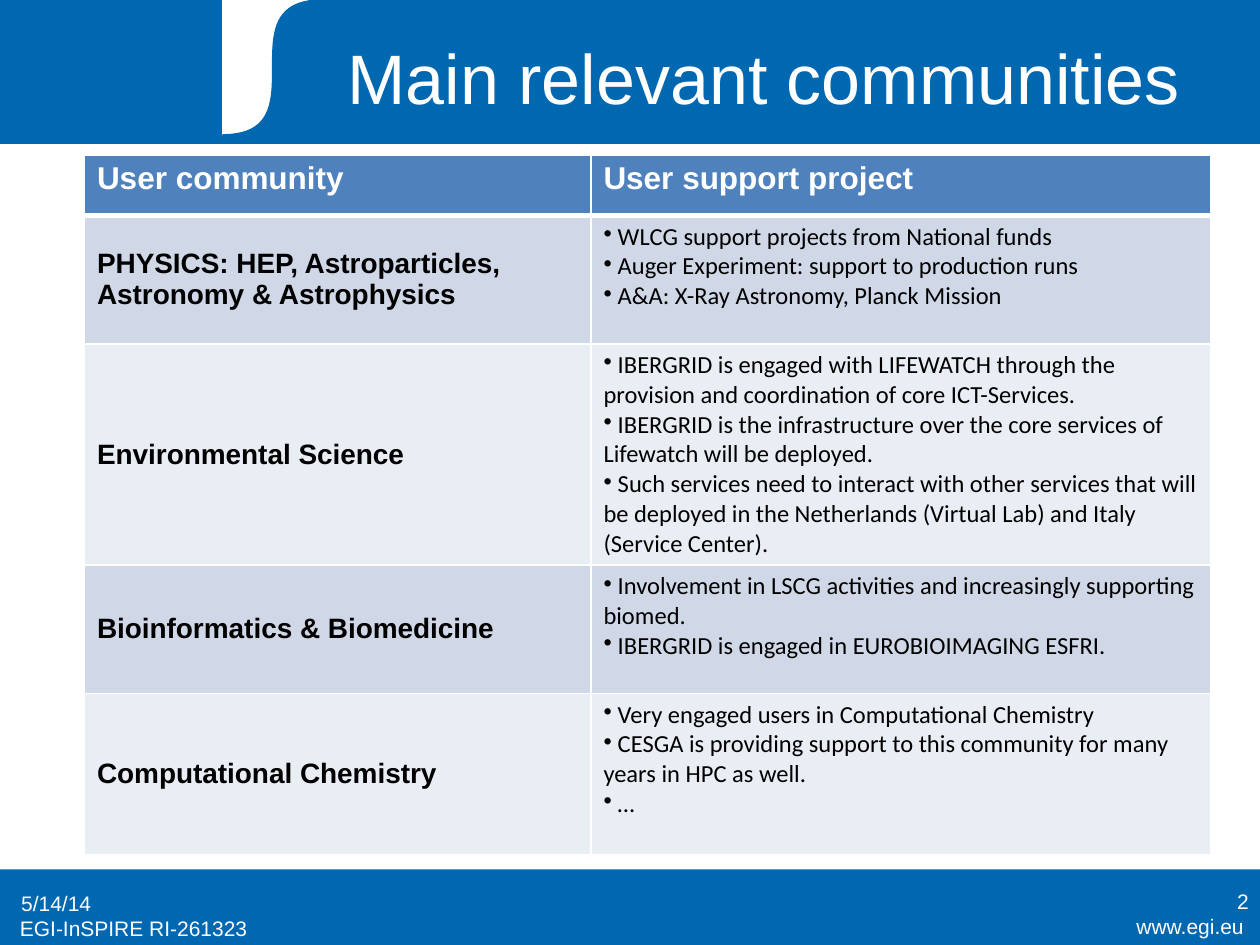
from dataclasses import dataclass

from lxml.etree import SubElement
from pptx import Presentation
from pptx.dml.color import RGBColor
from pptx.enum.shapes import MSO_SHAPE
from pptx.enum.text import MSO_ANCHOR, PP_ALIGN
from pptx.oxml.ns import qn
from pptx.util import Emu, Inches, Pt


@dataclass(frozen=True)
class Theme:
    blue: str = "0067B1"
    white: str = "FFFFFF"
    black: str = "000000"
    header: str = "4F81BD"
    bands: tuple[str, str] = ("D0D8E8", "E9EDF4")
    heading_font: str = "Arial"
    body_font: str = "Calibri"
    title_size: int = 40
    header_size: int = 18
    community_size: int = 16
    project_size: int = 14
    footer_size: int = 12


@dataclass(frozen=True)
class Box:
    """Left, top, width and height in percent of the slide."""
    left: float
    top: float
    width: float
    height: float

    def lengths(self) -> tuple[Emu, Emu, Emu, Emu]:
        return across(self.left), down(self.top), across(self.width), down(self.height)


@dataclass(frozen=True)
class Label:
    text: str
    box: Box
    size: int
    align: PP_ALIGN = PP_ALIGN.LEFT
    anchor: MSO_ANCHOR = MSO_ANCHOR.MIDDLE


@dataclass(frozen=True)
class Community:
    name: list[str]
    projects: list[str]
    height: float


THEME = Theme()
SLIDE_WIDTH, SLIDE_HEIGHT = Inches(10), Inches(7.5)
FOOTER = Box(0, 92, 100, 8)
BANNER = Box(0, 0, 100, 15.2)
NOTCH = Box(17.7, 0, 19.7, 14.27)
CURVE_SHARE = 0.4
CURVE_STEPS = 40
TABLE = Box(6.7, 16.4, 89.4, 74.07)
COLUMN_WIDTHS = (40.2, 49.2)
HEADER_HEIGHT = 6.4
HEADERS = ("User community", "User support project")

LABELS = [
    Label("www.egi.eu", Box(83.9, 96, 15.8, 4.13), THEME.footer_size,
          PP_ALIGN.RIGHT, MSO_ANCHOR.TOP),
    Label("EGI-InSPIRE RI-261323", Box(0.6, 96.27, 25, 4.13), THEME.footer_size,
          anchor=MSO_ANCHOR.TOP),
    Label("Main relevant communities", Box(23.2, 1.73, 74.8, 12.67), THEME.title_size,
          PP_ALIGN.CENTER),
    Label("5/14/14", Box(0.7, 92.93, 23.3, 5.33), THEME.footer_size),
    Label("2", Box(76.8, 92.67, 23.3, 5.33), THEME.footer_size, PP_ALIGN.RIGHT),
]

COMMUNITIES = [
    Community(
        ["PHYSICS: HEP, Astroparticles,", "Astronomy & Astrophysics"],
        ["WLCG support projects from National funds",
         "Auger Experiment: support to production runs",
         "A&A: X-Ray Astronomy, Planck Mission"], 13.6),
    Community(
        ["Environmental Science"],
        ["IBERGRID is engaged with LIFEWATCH through the provision and coordination "
         "of core ICT-Services.",
         "IBERGRID is the infrastructure over the core services of Lifewatch will be deployed.",
         "Such services need to interact with other services that will be deployed in "
         "the Netherlands (Virtual Lab) and Italy (Service Center)."], 23.4),
    Community(
        ["Bioinformatics & Biomedicine"],
        ["Involvement in LSCG activities and increasingly supporting biomed.",
         "IBERGRID is engaged in EUROBIOIMAGING ESFRI."], 13.6),
    Community(
        ["Computational Chemistry"],
        ["Very engaged users in Computational Chemistry",
         "CESGA is providing support to this community for many years in HPC as well.",
         "…"], 17.07),
]


def across(percent: float) -> Emu:
    return Emu(round(SLIDE_WIDTH * percent / 100))


def down(percent: float) -> Emu:
    return Emu(round(SLIDE_HEIGHT * percent / 100))


def write_text(frame, lines: list[str], *, size: int, color: str,
               font: str = THEME.heading_font, bold: bool = False,
               align: PP_ALIGN = PP_ALIGN.LEFT, bullet: str = "") -> None:
    frame.word_wrap = True
    for index, line in enumerate(lines):
        paragraph = frame.add_paragraph() if index else frame.paragraphs[0]
        paragraph.alignment = align
        if bullet:
            properties = paragraph._p.get_or_add_pPr()
            properties.set("marL", "0")
            properties.set("indent", "0")
            SubElement(properties, qn("a:buChar"), char=bullet)
        run = paragraph.add_run()
        run.text = f" {line}" if bullet else line
        run.font.size = Pt(size)
        run.font.name = font
        run.font.bold = bold
        run.font.color.rgb = RGBColor.from_string(color)


def paint(shape, color: str, outlined: bool = True) -> None:
    shape.shadow.inherit = False
    shape.fill.solid()
    shape.fill.fore_color.rgb = RGBColor.from_string(color)
    if outlined:
        shape.line.color.rgb = RGBColor.from_string(color)
        shape.line.width = Pt(0.75)
    else:
        shape.line.fill.background()


def draw_band(slide, box: Box, color: str, outlined: bool = True) -> None:
    shape = slide.shapes.add_shape(MSO_SHAPE.RECTANGLE, *box.lengths())
    paint(shape, color, outlined)


def draw_swoosh(slide, box: Box) -> None:
    left, top, width, height = box.lengths()
    right, bottom = left + width, top + height
    points = [(right, bottom), (left, bottom)]
    for step in range(1, CURVE_STEPS + 1):
        t = step / CURVE_STEPS
        x_share = CURVE_SHARE * (3 * t * (1 - t) ** 2 + t ** 3)
        y_share = (1 - t) ** 3 + 3 * t * (1 - t) ** 2
        points.append((left + round(width * x_share), top + round(height * y_share)))
    builder = slide.shapes.build_freeform(right, top)
    builder.add_line_segments(points, close=True)
    paint(builder.convert_to_shape(), THEME.blue)


def draw_label(slide, label: Label) -> None:
    frame = slide.shapes.add_textbox(*label.box.lengths()).text_frame
    frame.vertical_anchor = label.anchor
    write_text(frame, [label.text], size=label.size, color=THEME.white, align=label.align)


def style_cell(cell, fill: str, top: float, bottom: float) -> None:
    properties = cell._tc.get_or_add_tcPr()
    for side, width in (("L", 1), ("R", 1), ("T", top), ("B", bottom)):
        line = SubElement(properties, qn(f"a:ln{side}"), w=str(Pt(width)))
        solid = SubElement(line, qn("a:solidFill"))
        SubElement(solid, qn("a:srgbClr"), val=THEME.white)
    cell.fill.solid()
    cell.fill.fore_color.rgb = RGBColor.from_string(fill)


def draw_table(slide) -> None:
    table = slide.shapes.add_table(
        len(COMMUNITIES) + 1, len(HEADERS), *TABLE.lengths()).table
    table.first_row = table.horz_banding = False
    for column, width in zip(table.columns, COLUMN_WIDTHS):
        column.width = across(width)
    heights = [HEADER_HEIGHT] + [community.height for community in COMMUNITIES]
    for row, height in zip(table.rows, heights):
        row.height = down(height)
    for column, header in enumerate(HEADERS):
        cell = table.cell(0, column)
        style_cell(cell, THEME.header, 1, 3)
        write_text(cell.text_frame, [header], size=THEME.header_size,
                   color=THEME.white, bold=True)
    for row, community in enumerate(COMMUNITIES, start=1):
        name_cell, project_cell = table.cell(row, 0), table.cell(row, 1)
        for cell in (name_cell, project_cell):
            style_cell(cell, THEME.bands[(row - 1) % 2], 3 if row == 1 else 1, 1)
        name_cell.vertical_anchor = MSO_ANCHOR.MIDDLE
        write_text(name_cell.text_frame, community.name, size=THEME.community_size,
                   color=THEME.black, bold=True)
        write_text(project_cell.text_frame, community.projects, size=THEME.project_size,
                   color=THEME.black, font=THEME.body_font, bullet="•")


def main() -> None:
    presentation = Presentation()
    presentation.slide_width, presentation.slide_height = SLIDE_WIDTH, SLIDE_HEIGHT
    slide = presentation.slides.add_slide(presentation.slide_layouts[6])
    draw_band(slide, FOOTER, THEME.blue, outlined=False)
    draw_band(slide, BANNER, THEME.blue)
    draw_band(slide, NOTCH, THEME.white)
    draw_swoosh(slide, NOTCH)
    for label in LABELS:
        draw_label(slide, label)
    draw_table(slide)
    presentation.save("out.pptx")


if __name__ == "__main__":
    main()
